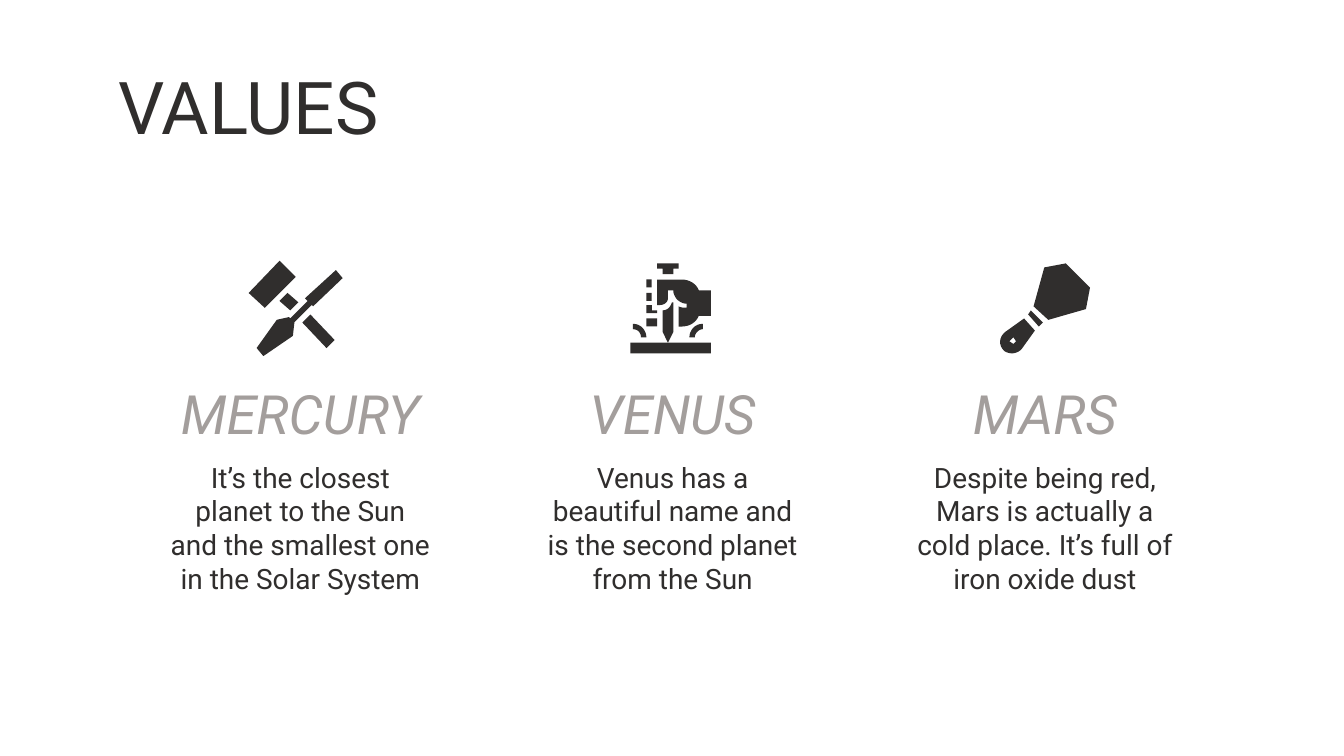
import pptx
import pptx.util
import pptx.dml.color
import pptx.enum.shapes
import pptx.enum.text

Inches = pptx.util.Inches
PP_ALIGN = pptx.enum.text.PP_ALIGN
rgb = pptx.dml.color.RGBColor.from_string
DARK, GREY, WHITE = "302E2D", "A39E9C", "FFFFFF"


def write_text(shape, text, size, color, alignment, italic=False):
    frame = shape.text_frame
    frame.text = text
    frame.word_wrap = True
    frame.auto_size = pptx.enum.text.MSO_AUTO_SIZE.NONE
    frame.vertical_anchor = pptx.enum.text.MSO_ANCHOR.MIDDLE
    frame.margin_left = frame.margin_right = Inches(0.1)
    frame.margin_top = frame.margin_bottom = Inches(0.1)
    paragraph = frame.paragraphs[0]
    paragraph.alignment = alignment
    font = paragraph.runs[0].font
    font.name = "Roboto"
    font.size = pptx.util.Pt(size)
    font.italic = italic
    font.color.rgb = rgb(color)


def draw_outline(shapes, *contours):
    """Draw closed contours; a point of six numbers is a Bezier curve."""
    builder = None
    for contour in contours:
        points = [contour[0]]
        for point in contour[1:]:
            if len(point) == 2:
                points.append(point)
                continue
            corners = [points[-1], point[:2], point[2:4], point[4:]]
            for step in range(1, 9):
                t = step / 8
                weights = [(1 - t) ** 3, 3 * t * (1 - t) ** 2, 3 * t * t * (1 - t), t ** 3]
                points.append(tuple(sum(w * c[axis] for w, c in zip(weights, corners))
                                    for axis in (0, 1)))
        points = [(Inches(x), Inches(y)) for x, y in points]
        if builder is None:
            builder = shapes.build_freeform(*points[0])
        else:
            builder.move_to(*points[0])
        builder.add_line_segments(points[1:], close=True)
    builder.convert_to_shape()


# Widescreen 16:9 slide
presentation = pptx.Presentation()
presentation.slide_width = Inches(10)
presentation.slide_height = Inches(10 * 9 / 16)
slide = presentation.slides.add_slide(presentation.slide_layouts[5])
slide.background.fill.solid()
slide.background.fill.fore_color.rgb = rgb(WHITE)

# Title
title = slide.shapes.title
title.left, title.top = Inches(0.78), Inches(0.59)
title.width, title.height = Inches(8.44), Inches(0.39)
write_text(title, "VALUES", 39, DARK, PP_ALIGN.LEFT)

# Three columns: name and description
columns = [
    ("MERCURY", "It’s the closest planet to the Sun and the smallest one in the Solar System"),
    ("VENUS", "Venus has a beautiful name and is the second planet from the Sun"),
    ("MARS", "Despite being red, Mars is actually a cold place. It’s full of iron oxide dust"),
]
for index, (name, description) in enumerate(columns):
    left = Inches(1.16 + 2.77 * index)
    heading = slide.shapes.add_textbox(left, Inches(2.88), Inches(2.15), Inches(0.38))
    write_text(heading, name, 29, GREY, PP_ALIGN.CENTER, italic=True)
    body = slide.shapes.add_textbox(left, Inches(3.33), Inches(2.15), Inches(1.19))
    write_text(body, description, 15, DARK, PP_ALIGN.CENTER)

# Icon: crossed hammer and chisel
tools = slide.shapes.add_group_shape()
draw_outline(tools.shapes, [
    (2.5, 2.01), (2.27, 2.22), (2.29, 2.24), (2.16, 2.37), (2.15, 2.36),
    (2.06, 2.38), (1.91, 2.59), (1.96, 2.65), (2.18, 2.5), (2.19, 2.41),
    (2.19, 2.4), (2.32, 2.27), (2.33, 2.28), (2.55, 2.07)])
draw_outline(tools.shapes, [(2.08, 1.94), (1.85, 2.18), (1.97, 2.29), (2.2, 2.06)])
draw_outline(tools.shapes, [(2.14, 2.18), (2.08, 2.24), (2.16, 2.31), (2.22, 2.25)])
draw_outline(tools.shapes, [(2.31, 2.34), (2.25, 2.4), (2.43, 2.59), (2.49, 2.53)])

# Icon: hand driving a chisel
carving = slide.shapes.add_group_shape()
bars = [(4.69, 2.55, 0.6, 0.08), (4.81, 2.37, 0.08, 0.06),
        (4.81, 2.08, 0.04, 0.06), (4.81, 2.18, 0.04, 0.06)]
for bar in bars:
    carving.shapes.add_shape(pptx.enum.shapes.MSO_SHAPE.RECTANGLE, *map(Inches, bar))
draw_outline(carving.shapes, [  # right chip
    (5.23, 2.41), (5.17, 2.41, 5.13, 2.46, 5.13, 2.51), (5.17, 2.51),
    (5.17, 2.48, 5.2, 2.45, 5.23, 2.45)])
draw_outline(carving.shapes, [  # left chip
    (4.71, 2.41), (4.71, 2.45), (4.75, 2.45, 4.77, 2.48, 4.77, 2.51),
    (4.81, 2.51), (4.81, 2.46, 4.77, 2.41, 4.71, 2.41)])
draw_outline(carving.shapes, [  # chisel head
    (4.89, 1.96), (4.89, 2), (4.93, 2), (4.93, 2.04),
    (5.01, 2.04), (5.01, 2), (5.05, 2), (5.05, 1.96)])
draw_outline(carving.shapes, [  # hand
    (4.89, 2.08), (4.89, 2.27), (4.91, 2.27), (4.94, 2.27, 4.97, 2.25, 4.97, 2.22),
    (4.97, 2.16), (5.01, 2.16), (5.01, 2.17, 5.01, 2.18, 5.02, 2.2),
    (5.03, 2.23, 5.07, 2.26, 5.11, 2.26), (5.11, 2.29),
    (5.09, 2.29, 5.07, 2.29, 5.05, 2.28), (5.05, 2.43), (5.07, 2.43),
    (5.13, 2.43, 5.18, 2.4, 5.2, 2.35), (5.29, 2.35), (5.29, 2.16),
    (5.2, 2.16), (5.18, 2.11, 5.13, 2.08, 5.07, 2.08)])
draw_outline(carving.shapes, [  # blade
    (5, 2.25), (4.99, 2.28, 4.97, 2.31, 4.93, 2.31), (4.93, 2.47),
    (4.97, 2.55), (5.01, 2.47), (5.01, 2.25)])
draw_outline(carving.shapes, [  # fingertip
    (4.81, 2.27), (4.81, 2.33), (4.89, 2.33), (4.89, 2.31), (4.85, 2.31), (4.85, 2.27)])

# Icon: trowel
trowel = slide.shapes.add_group_shape()
draw_outline(trowel.shapes, [(7.67, 2.31), (7.65, 2.34), (7.73, 2.43), (7.76, 2.4)])
draw_outline(trowel.shapes, [
    (7.93, 1.96), (7.77, 1.99), (7.69, 2.28), (7.8, 2.38), (8.08, 2.3), (8.11, 2.14)])
draw_outline(
    trowel.shapes,
    [(7.54, 2.51), (7.56, 2.54), (7.54, 2.56), (7.51, 2.54)],
    [(7.62, 2.37), (7.48, 2.47), (7.43, 2.51, 7.43, 2.57, 7.47, 2.61),
     (7.48, 2.62, 7.51, 2.63, 7.53, 2.63), (7.55, 2.63, 7.58, 2.62, 7.6, 2.6),
     (7.7, 2.46)])

# Icon colours
for icon in (tools, carving, trowel):
    for shape in icon.shapes:
        shape.shadow.inherit = False
        shape.fill.solid()
        shape.fill.fore_color.rgb = rgb(DARK)
        shape.line.fill.background()

presentation.save("out.pptx")
